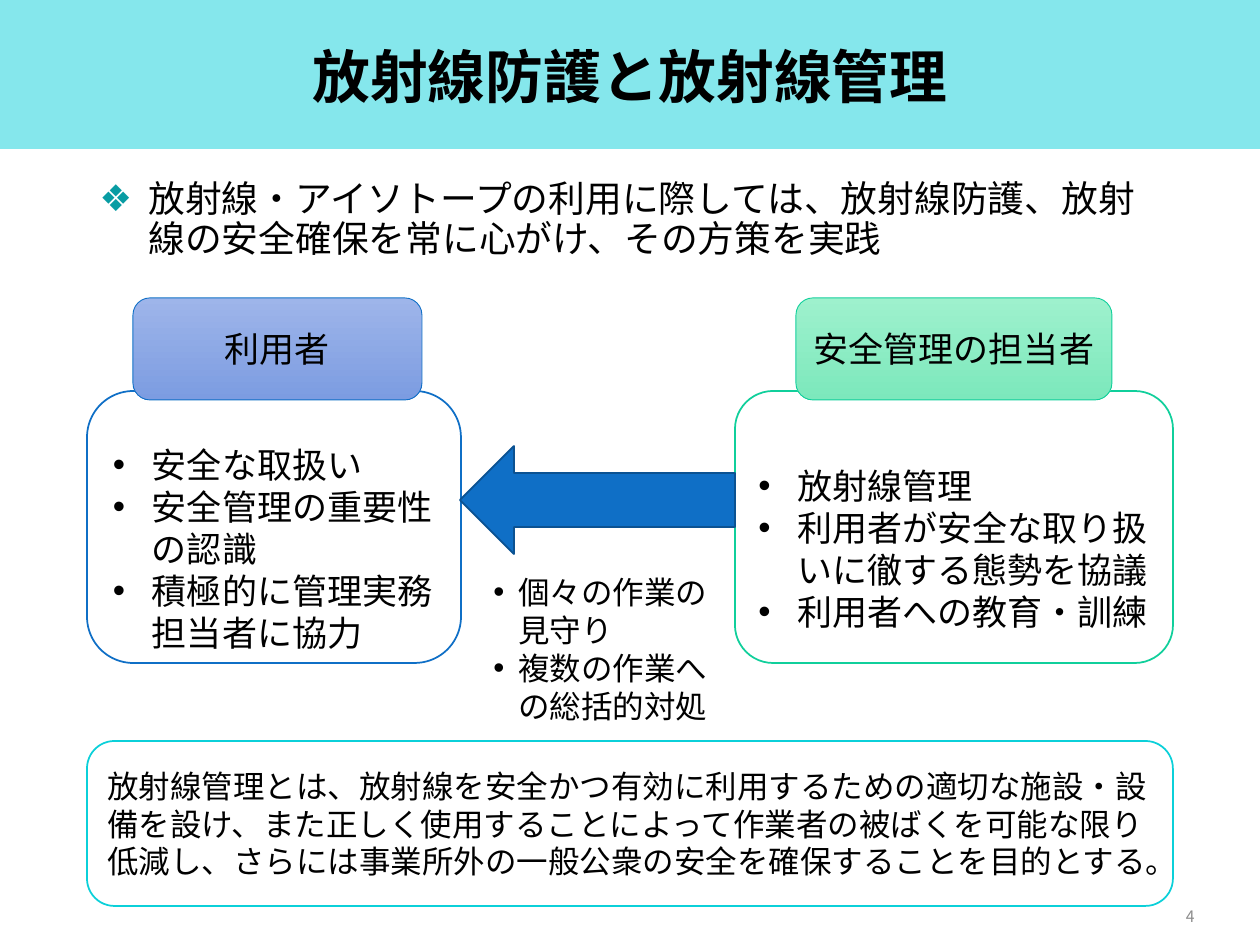
from pptx import Presentation
from pptx.dml.color import RGBColor
from pptx.enum.shapes import MSO_SHAPE as Shape
from pptx.enum.text import MSO_ANCHOR as Anchor, PP_ALIGN as Align
from pptx.oxml.ns import qn
from pptx.util import Pt
from lxml.etree import SubElement

FONT = "Noto Sans CJK JP"
EMU_PER_PX = 914400 / 126
COLORS = {
    "black": "000000", "white": "FFFFFF", "grey": "8C8C8C",
    "band": "85E7EC", "teal": "0BD0D9", "bullet": "089CA3",
    "blue": "0F6FC6", "navy": "0B5292", "green": "10CF9B",
}
TITLE = "放射線防護と放射線管理"
LEAD = "放射線・アイソトープの利用に際しては、放射線防護、放射線の安全確保を常に心がけ、その方策を実践"
SUPPORT = ["個々の作業の見守り", "複数の作業への総括的対処"]
PURPOSE = ("放射線管理とは、放射線を安全かつ有効に利用するための適切な施設・設備を設け、"
           "また正しく使用することによって作業者の被ばくを可能な限り低減し、"
           "さらには事業所外の一般公衆の安全を確保することを目的とする。")
PAGE_NUMBER = "4"
ROLES = [
    {"name": "利用者", "color": "blue", "gradient": ("9EB5EA", "7C9CE1"),
     "panel": (87, 374), "tab": (133, 289), "corner": 0.17,
     "duties": ["安全な取扱い", "安全管理の重要性の認識", "積極的に管理実務担当者に協力"]},
    {"name": "安全管理の担当者", "color": "green", "gradient": ("9EF1CD", "7CE8BC"),
     "panel": (735, 438), "tab": (796, 316), "corner": 0.14,
     "duties": ["放射線管理", "利用者が安全な取り扱いに徹する態勢を協議", "利用者への教育・訓練"]},
]
PANEL_TOP, PANEL_HEIGHT = 391, 272
TAB_TOP, TAB_HEIGHT = 298, 102
HEADING_GAP = 42


def px(value):
    return int(value * EMU_PER_PX)


def rgb(name):
    return RGBColor.from_string(COLORS.get(name, name))


def add_box(page, kind, at, fill, line=None, weight=1):
    box = page.shapes.add_shape(kind, *map(px, at))
    box.shadow.inherit = False
    if isinstance(fill, tuple):
        box.fill.gradient()
        box.fill.gradient_angle = 270
        for stop, color in zip(box.fill.gradient_stops, fill):
            stop.color.rgb = rgb(color)
    else:
        box.fill.solid()
        box.fill.fore_color.rgb = rgb(fill)
    if line:
        box.line.color.rgb = rgb(line)
        box.line.width = Pt(weight)
    else:
        box.line.fill.background()
    return box


def add_text(page, at):
    return page.shapes.add_textbox(*map(px, at))


def add_bullet(para, mark, indent, color):
    props = para._p.get_or_add_pPr()
    props.set("marL", str(px(indent)))
    props.set("indent", str(-px(indent)))
    if color:
        tint = SubElement(props, qn("a:buClr"))
        SubElement(tint, qn("a:srgbClr")).set("val", COLORS[color])
    SubElement(props, qn("a:buFont")).set("typeface", "Arial")
    SubElement(props, qn("a:buChar")).set("char", mark)


def write(box, lines, size, color="black", bold=False, align=Align.LEFT, anchor=Anchor.MIDDLE,
          spacing=None, mark=None, indent=0, mark_color=None):
    frame = box.text_frame
    frame.word_wrap = True
    frame.vertical_anchor = anchor
    frame.text = "\n".join(lines)
    for para in frame.paragraphs:
        para.alignment = align
        if spacing:
            para.line_spacing = spacing
        if mark:
            add_bullet(para, mark, indent, mark_color)
        for span in para.runs:
            span.font.size = Pt(size)
            span.font.name = FONT
            span.font.bold = bold
            span.font.color.rgb = rgb(color)
            SubElement(span._r.get_or_add_rPr(), qn("a:ea")).set("typeface", FONT)


def add_role(page, role):
    left, width = role["panel"]
    panel = add_box(page, Shape.ROUNDED_RECTANGLE, (left, PANEL_TOP, width, PANEL_HEIGHT),
                    "white", role["color"])
    panel.adjustments[0] = role["corner"]
    write(panel, role["duties"], 20, mark="•", indent=39)
    panel.text_frame.margin_top += px(HEADING_GAP)
    left, width = role["tab"]
    tab = add_box(page, Shape.ROUNDED_RECTANGLE, (left, TAB_TOP, width, TAB_HEIGHT),
                  role["gradient"], role["color"], 0.5)
    write(tab, [role["name"]], 20, align=Align.CENTER)


def main():
    deck = Presentation()
    deck.slide_width, deck.slide_height = px(1260), px(945)
    page = deck.slides.add_slide(deck.slide_layouts[6])

    add_box(page, Shape.RECTANGLE, (0, 0, 1260, 149), "band")
    write(add_text(page, (87, 26, 1086, 107)), [TITLE], 33, bold=True,
          align=Align.CENTER, spacing=0.9)
    write(add_text(page, (87, 175, 1086, 100)), [LEAD], 21, anchor=Anchor.TOP,
          spacing=0.9, mark="❖", indent=49, mark_color="bullet")

    for role in ROLES:
        add_role(page, role)
    add_box(page, Shape.LEFT_ARROW, (460, 446, 275, 108), "blue", "navy")
    write(add_text(page, (481, 567, 253, 165)), SUPPORT, 18, anchor=Anchor.TOP,
          mark="•", indent=25)

    purpose = add_box(page, Shape.ROUNDED_RECTANGLE, (87, 741, 1086, 165), "white", "teal")
    write(purpose, [PURPOSE], 18)
    write(add_text(page, (924, 891, 283, 50)), [PAGE_NUMBER], 9, "grey", align=Align.RIGHT)

    deck.save("out.pptx")


if __name__ == "__main__":
    main()
